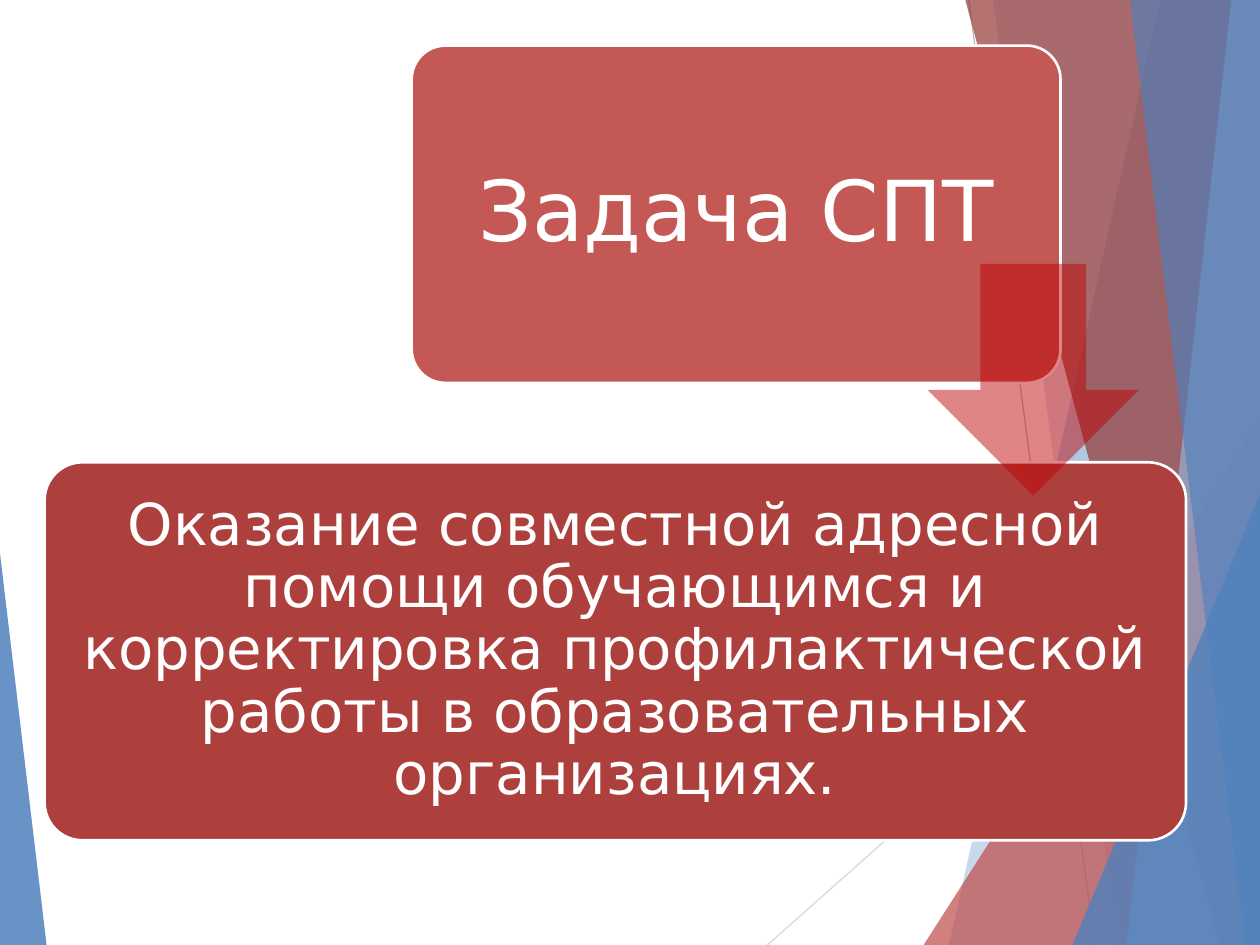
from lxml.etree import SubElement
from pptx import Presentation
from pptx.dml.color import RGBColor
from pptx.enum.shapes import MSO_CONNECTOR, MSO_SHAPE
from pptx.enum.text import MSO_ANCHOR, PP_ALIGN
from pptx.oxml.ns import qn
from pptx.util import Cm, Pt

FONT = "DejaVu Sans"
SLIDE_BOX = (0, 0, 25.4, 19.05)
BLUE, RED, DARK_RED, PALE_BLUE = "4F81BD", "C0504D", "953735", "95B3D7"


def color(hex_code):
    return RGBColor.from_string(hex_code)


def paint(shape, hex_code, opacity=100):
    """Give a flat, borderless fill; opacity is in percent."""
    shape.shadow.inherit = False
    shape.line.fill.background()
    shape.fill.solid()
    shape.fill.fore_color.rgb = color(hex_code)
    if opacity < 100:
        tint = shape.fill._xPr.find(qn("a:solidFill"))[0]
        SubElement(tint, qn("a:alpha"), val=str(opacity * 1000))


def add_thin_line(slide, start, end, hex_code):
    line = slide.shapes.add_connector(
        MSO_CONNECTOR.STRAIGHT, *(Cm(v) for v in start + end))
    line.line.color.rgb = color(hex_code)
    line.line.width = Pt(0.75)
    SubElement(line._element.spPr, qn("a:effectLst"))


def add_band(slide, box, top_x, bottom_x, hex_code, opacity):
    """Fill from a slanted left edge to the right side of the box."""
    left, top, width, height = box
    right, bottom = left + width, top + height
    outline = slide.shapes.build_freeform(Cm(left + top_x), Cm(top), scale=1)
    outline.add_line_segments(
        [(Cm(x), Cm(y)) for x, y in
         ((right, top), (right, bottom), (left + bottom_x, bottom))],
        close=True)
    paint(outline.convert_to_shape(), hex_code, opacity)


def add_wedge(slide, box, x, width, height, apex, hex_code, opacity):
    """Stand a right triangle on the bottom of the box."""
    left, top, _, box_height = box
    wedge = slide.shapes.add_shape(
        MSO_SHAPE.ISOSCELES_TRIANGLE, Cm(left + x),
        Cm(top + box_height - height), Cm(width), Cm(height))
    wedge.adjustments[0] = apex
    paint(wedge, hex_code, opacity)


def add_backdrop(slide, box):
    left, top, width, height = box
    right, bottom = left + width, top + height
    add_thin_line(slide, (left + 19.53, top), (left + 22.07, bottom), "BFBFBF")
    add_thin_line(slide, (right, top + 10.24), (left + 15.47, bottom), "D9D9D9")
    add_band(slide, box, 23.39, 19.13, BLUE, 30)
    add_band(slide, box, 20.02, 22.53, BLUE, 20)
    add_wedge(slide, box, 18.62, 6.78, 10.59, 1, RED, 72)
    add_band(slide, box, 19.46, 24.59, DARK_RED, 70)
    add_band(slide, box, 24.82, 22.71, PALE_BLUE, 70)
    add_band(slide, box, 22.78, 25.1, BLUE, 65)
    add_wedge(slide, box, 21.62, 3.78, 9.07, 1, BLUE, 80)
    add_wedge(slide, box, 0, 0.94, 7.9, 0, BLUE, 85)


def add_panel(slide, box, text, size, margin, hex_code):
    panel = slide.shapes.add_shape(
        MSO_SHAPE.ROUNDED_RECTANGLE, *(Cm(v) for v in box))
    panel.adjustments[0] = 0.1
    paint(panel, hex_code)
    panel.line.color.rgb = color("FFFFFF")
    panel.line.width = Pt(1.5)

    frame = panel.text_frame
    frame.word_wrap = True
    frame.vertical_anchor = MSO_ANCHOR.MIDDLE
    frame.margin_left = frame.margin_right = Cm(margin)
    frame.margin_top = frame.margin_bottom = Cm(margin)
    paragraph = frame.paragraphs[0]
    paragraph.text = text
    paragraph.alignment = PP_ALIGN.CENTER
    paragraph.line_spacing = 0.9
    paragraph.font.name = FONT
    paragraph.font.size = Pt(size)
    paragraph.font.color.rgb = color("FFFFFF")


def add_task_flow(slide, box):
    """Place the heading panel, the task panel and the arrow between them."""
    left, top, width, height = box
    add_panel(slide, (left + 7.4, top, 13.08, 6.8),
              "Задача СПТ", 48, 0.51, "C35855")
    add_panel(slide, (left, top + height - 7.62, width, 7.62),
              "Оказание совместной адресной помощи обучающимся и "
              "корректировка профилактической работы в образовательных "
              "организациях.", 33, 0.36, "AD403D")
    arrow = slide.shapes.add_shape(
        MSO_SHAPE.DOWN_ARROW, Cm(left + 17.8), Cm(top + 4.4),
        Cm(4.26), Cm(4.67))
    paint(arrow, "C00000", 48)


def main():
    presentation = Presentation()
    presentation.slide_width = Cm(SLIDE_BOX[2])
    presentation.slide_height = Cm(SLIDE_BOX[3])
    slide = presentation.slides.add_slide(presentation.slide_layouts[6])
    add_backdrop(slide, SLIDE_BOX)
    add_task_flow(slide, (0.9, 0.92, 23.01, 16.02))
    presentation.save("out.pptx")


if __name__ == "__main__":
    main()
